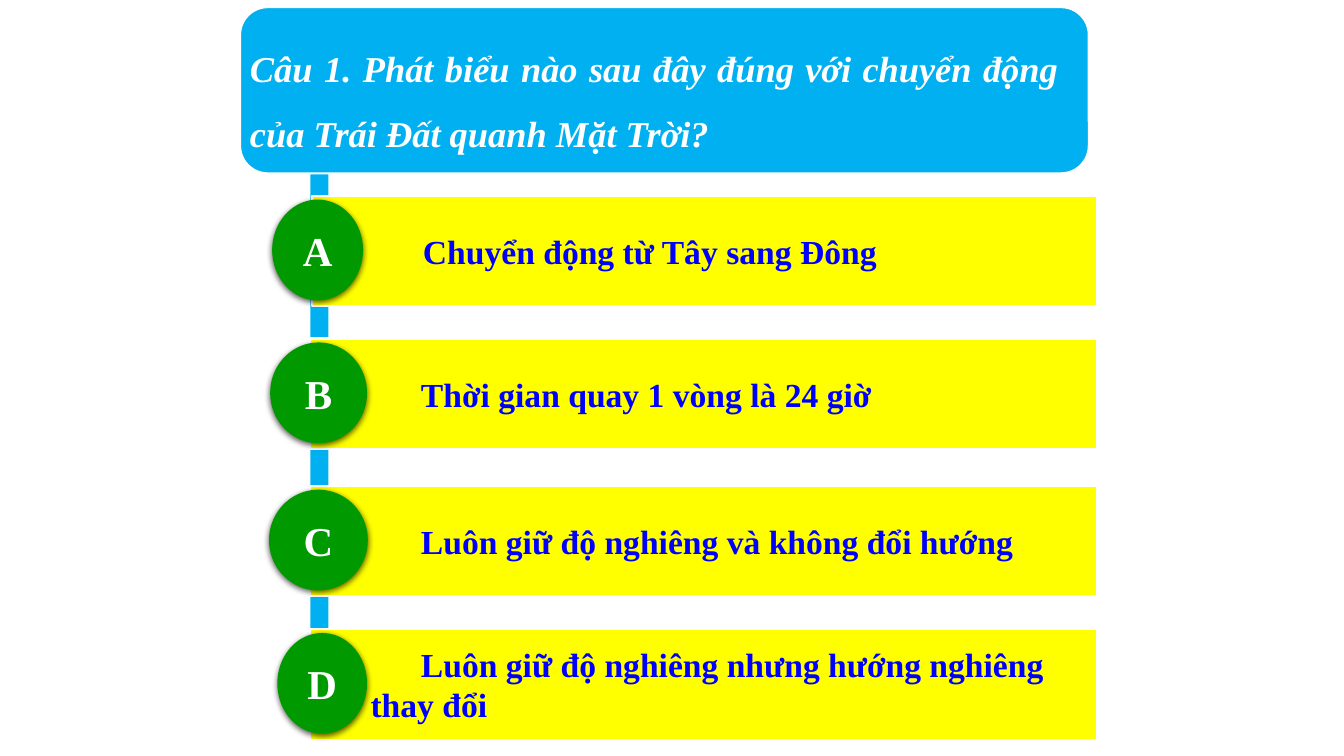
from dataclasses import dataclass

from lxml.etree import SubElement as Sub
from pptx import Presentation
from pptx.dml.color import RGBColor as Rgb
from pptx.enum.shapes import MSO_SHAPE as Kind
from pptx.enum.text import MSO_ANCHOR as Anchor, PP_ALIGN as Align
from pptx.oxml.ns import qn
from pptx.util import Cm, Pt


@dataclass(frozen=True)
class Theme:
    sky: str = "00B0F0"
    bar: str = "FFFF00"
    disc: str = "009900"
    ink: str = "0000FF"
    white: str = "FFFFFF"
    shade: str = "000000"
    face: str = "Times New Roman"
    ask: float = 26
    reply: float = 24
    mark: float = 29.3
    edge: float = 1.5


look = Theme()


def put(item, form):
    for key, val in form.items():
        setattr(item, key, val)


def draw(slide, kind, box, fill, edge=None):
    shape = slide.shapes.add_shape(kind, *map(Cm, box))
    shape.shadow.inherit = False
    shape.fill.solid()
    shape.fill.fore_color.rgb = Rgb.from_string(fill)
    if edge:
        shape.line.color.rgb = Rgb.from_string(edge)
        shape.line.width = Pt(look.edge)
    else:
        shape.line.fill.background()
    return shape


def write(par, text, size, tint, form):
    run = par.add_run()
    run.text = text
    put(run.font, {"name": look.face, "size": Pt(size), "bold": True})
    run.font.color.rgb = Rgb.from_string(tint)
    put(par, form)
    return run


def glow(shape):
    list_el = shape._element.spPr.find(qn("a:effectLst"))
    form = {"blurRad": Pt(4.5), "dist": Pt(1.5), "dir": 5400000, "rotWithShape": 0}
    cast = Sub(list_el, qn("a:outerShdw"), {k: str(v) for k, v in form.items()})
    tint = Sub(cast, qn("a:srgbClr"), val=look.shade)
    Sub(tint, qn("a:alpha"), val="63000")


def ask(slide, box, text):
    left, top, wide, high = box
    draw(slide, Kind.ROUNDED_RECTANGLE, box, look.sky, look.white)
    area = (left, top + 0.3, wide - 0.49, high - 0.6)
    frame = slide.shapes.add_textbox(*map(Cm, area)).text_frame
    frame.word_wrap = True
    form = {"alignment": Align.JUSTIFY, "line_spacing": 1.5}
    run = write(frame.paragraphs[0], text, look.ask, look.white, form)
    run.font.italic = True


def reply(slide, box, lines):
    frame = draw(slide, Kind.RECTANGLE, box, look.bar, look.white).text_frame
    put(frame, {"word_wrap": True, "vertical_anchor": Anchor.MIDDLE})
    for row, line in enumerate(lines):
        par = frame.add_paragraph() if row else frame.paragraphs[0]
        write(par, line, look.reply, look.ink, {"alignment": Align.JUSTIFY})
        inset = Cm(1.27 if row else 2.54)
        par._p.get_or_add_pPr().set("marL", str(inset))


def badge(slide, box, mark):
    disc = draw(slide, Kind.OVAL, box, look.disc)
    glow(disc)
    frame = disc.text_frame
    put(frame, {"word_wrap": True, "vertical_anchor": Anchor.MIDDLE})
    write(frame.paragraphs[0], mark, look.mark, look.white, {"alignment": Align.CENTER})


def quiz(slide, box, text, picks):
    left, top, wide, high = box
    draw(slide, Kind.RECTANGLE, (left + 1.77, top + 2.54, 0.46, 15.29), look.sky)
    ask(slide, (left, top, wide - 0.22, 4.19), text)
    for mark, drop, nudge, shift, span, lines in picks:
        start = left + 1.77 + nudge
        reply(slide, (start, top + drop, left + wide - start, 2.79), lines)
        badge(slide, (left + shift, top + drop + 0.1, span, 2.54), mark)


def main():
    deck = Presentation()
    put(deck, {"slide_width": Cm(33.87), "slide_height": Cm(19.05)})
    slide = deck.slides.add_slide(deck.slide_layouts[6])
    picks = [
        ("A", 4.75, 0.05, 0.81, 2.29, ["Chuyển động từ Tây sang Đông"]),
        ("B", 8.35, 0, 0.76, 2.44, ["Thời gian quay 1 vòng là 24 giờ"]),
        ("C", 12.06, 0, 0.73, 2.49, ["Luôn giữ độ nghiêng và không đổi hướng"]),
        ("D", 15.67, 0, 0.94, 2.26,
         ["Luôn giữ độ nghiêng nhưng hướng nghiêng", "thay đổi"]),
    ]
    text = "Câu 1. Phát biểu nào sau đây đúng với chuyển động của Trái Đất quanh Mặt Trời?"
    quiz(slide, (6.05, 0.18, 21.61, 18.46), text, picks)
    deck.save("out.pptx")


if __name__ == "__main__":
    main()
